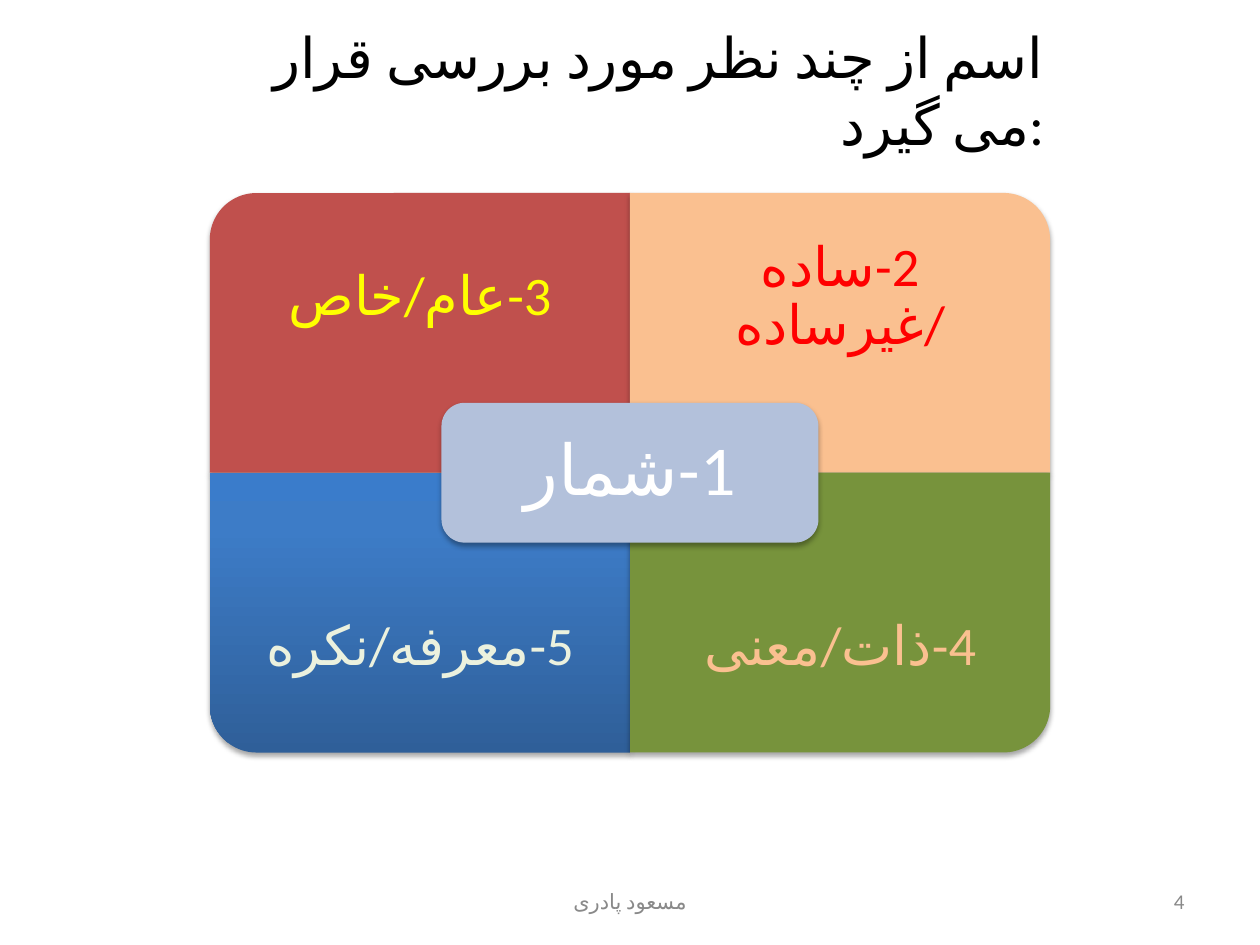
from dataclasses import dataclass

from lxml import etree
from pptx import Presentation
from pptx.dml.color import RGBColor
from pptx.enum.shapes import MSO_SHAPE
from pptx.enum.text import MSO_ANCHOR, MSO_AUTO_SIZE, PP_ALIGN
from pptx.oxml import parse_xml
from pptx.oxml.ns import nsdecls, qn
from pptx.util import Cm, Pt

ROUND_ONE = MSO_SHAPE.ROUND_1_RECTANGLE
ROUNDED = MSO_SHAPE.ROUNDED_RECTANGLE
CENTER, RIGHT = PP_ALIGN.CENTER, PP_ALIGN.RIGHT
TOP, MIDDLE = MSO_ANCHOR.TOP, MSO_ANCHOR.MIDDLE
GROW = MSO_AUTO_SIZE.SHAPE_TO_FIT_TEXT


@dataclass(frozen=True)
class Theme:
    font: str = "Calibri"
    language: str = "fa-IR"
    title_size: int = 32
    quadrant_size: int = 31
    hub_size: int = 40
    footer_size: int = 12
    black: str = "000000"
    white: str = "FFFFFF"
    grey: str = "898989"
    red: str = "C0504D"
    peach: str = "FAC090"
    green: str = "77933C"
    hub: str = "B3C1DB"
    blue_stops: tuple = ((0, "2F5F99"), (80, "3D7CC7"), (100, "3A7CCB"))
    yellow: str = "FFFF00"
    bright_red: str = "FF0000"
    pale_green: str = "EBF1DE"


class SlideBuilder:
    def __init__(self, slide, theme):
        self.slide = slide
        self.theme = theme

    def text(self, words, left, top, width, height, size, color,
             align=CENTER, anchor=MIDDLE, rtl=True, inset=None, line_spacing=None):
        box = self.slide.shapes.add_textbox(Cm(left), Cm(top), Cm(width), Cm(height))
        frame = box.text_frame
        frame.word_wrap = True
        frame.vertical_anchor = anchor
        if inset is not None:
            frame.margin_left = frame.margin_right = Cm(inset)
            frame.margin_top = frame.margin_bottom = Cm(inset)
        frame.text = words
        paragraph = frame.paragraphs[0]
        paragraph.alignment = align
        if line_spacing:
            paragraph.line_spacing = line_spacing
        if rtl:
            paragraph._p.get_or_add_pPr().set("rtl", "1")
        font = paragraph.runs[0].font
        font.name = self.theme.font
        font.size = Pt(size)
        font.color.rgb = RGBColor.from_string(color)
        # Persian script takes its face and language from these
        run_style = paragraph.runs[0]._r.get_or_add_rPr()
        run_style.set("lang", self.theme.language)
        etree.SubElement(run_style, qn("a:cs")).set("typeface", self.theme.font)
        return box

    def panel(self, kind, center_x, center_y, width, height, fill, rotation=0):
        # A quarter turn swaps the sides around the same centre
        if rotation % 180:
            width, height = height, width
        shape = self.slide.shapes.add_shape(
            kind, Cm(center_x - width / 2), Cm(center_y - height / 2),
            Cm(width), Cm(height))
        shape.rotation = rotation
        shape.line.fill.background()
        if isinstance(fill, str):
            shape.fill.solid()
            shape.fill.fore_color.rgb = RGBColor.from_string(fill)
        else:
            self.gradient(shape, fill)
        self.shadow(shape)

    def gradient(self, shape, stops):
        stop_xml = "".join(
            f'<a:gs pos="{position * 1000}"><a:srgbClr val="{color}"/></a:gs>'
            for position, color in stops)
        shape._element.spPr.prstGeom.addnext(parse_xml(
            f'<a:gradFill {nsdecls("a")} rotWithShape="0"><a:gsLst>{stop_xml}</a:gsLst>'
            '<a:lin ang="16200000" scaled="0"/></a:gradFill>'))

    def shadow(self, shape):
        shape.shadow.inherit = False
        shape._element.spPr.effectLst.append(parse_xml(
            f'<a:outerShdw {nsdecls("a")} blurRad="{Pt(3.1)}" dist="{Pt(1.8)}" '
            'dir="5400000" rotWithShape="0">'
            f'<a:srgbClr val="{self.theme.black}"><a:alpha val="35000"/></a:srgbClr>'
            '</a:outerShdw>'))


def main():
    theme = Theme()
    deck = Presentation()
    deck.slide_width, deck.slide_height = Cm(25.4), Cm(19.05)
    builder = SlideBuilder(deck.slides.add_slide(deck.slide_layouts[6]), theme)

    # Title
    title = builder.text("اسم از چند نظر مورد بررسی قرار می گیرد:", 3.5, 0.33, 17.8, 1.62,
                         theme.title_size, theme.black, RIGHT, TOP, rtl=False)
    title.text_frame.auto_size = GROW

    # Four quadrants around the centre: column side, row side, turn
    middle_x, middle_y = 12.7, 9.53
    quadrant_w, quadrant_h = 8.47, 5.64
    label_h = quadrant_h * 0.75
    quadrants = (
        ("3-عام/خاص", -1, -1, 270, theme.red, theme.yellow),
        ("2-ساده /غیرساده", 1, -1, 0, theme.peach, theme.bright_red),
        ("5-معرفه/نکره", -1, 1, 180, theme.blue_stops, theme.pale_green),
        ("4-ذات/معنی", 1, 1, 90, theme.green, theme.peach),
    )
    for words, side_x, side_y, turn, fill, color in quadrants:
        center_x = middle_x + side_x * quadrant_w / 2
        center_y = middle_y + side_y * quadrant_h / 2
        builder.panel(ROUND_ONE, center_x, center_y, quadrant_w, quadrant_h, fill, turn)
        # The label keeps to the outer three quarters, clear of the hub
        label_y = center_y + side_y * (quadrant_h - label_h) / 2
        builder.text(words, center_x - quadrant_w / 2, label_y - label_h / 2,
                     quadrant_w, label_h, theme.quadrant_size, color,
                     inset=0.6, line_spacing=0.9)

    # Hub
    hub_w, hub_h, hub_pad = 7.6, 2.82, 0.14
    builder.panel(ROUNDED, middle_x, middle_y, hub_w, hub_h, theme.hub)
    builder.text("1-شمار", middle_x - hub_w / 2 + hub_pad, middle_y - hub_h / 2 + hub_pad,
                 hub_w - 2 * hub_pad, hub_h - 2 * hub_pad, theme.hub_size, theme.white,
                 inset=0.43, line_spacing=0.9)

    # Footer and page number
    footer_top, footer_h = 17.65, 1.02
    builder.text("مسعود پادری", 8.68, footer_top, 8.04, footer_h,
                 theme.footer_size, theme.grey)
    builder.text("4", 18.2, footer_top, 5.93, footer_h,
                 theme.footer_size, theme.grey, RIGHT)

    deck.save("out.pptx")


if __name__ == "__main__":
    main()
